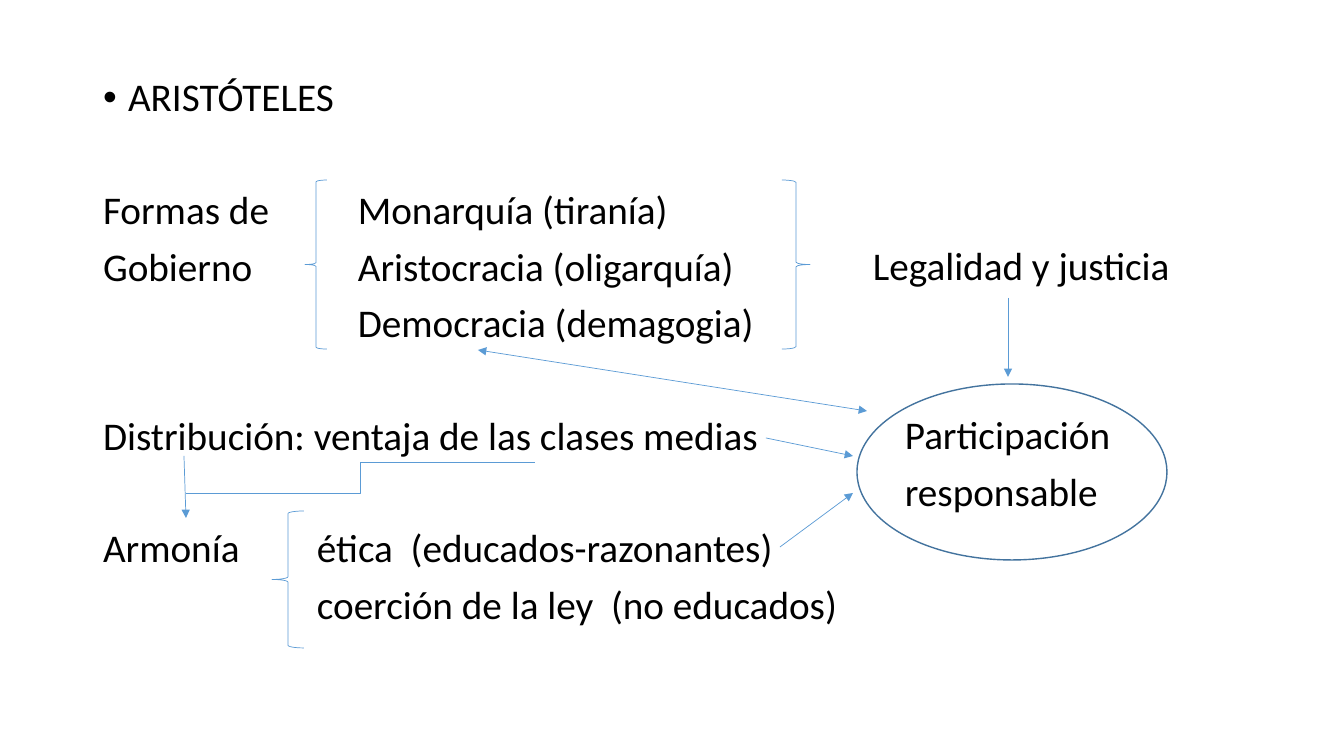
from lxml import etree
from pptx import Presentation
from pptx import util as u
from pptx.dml import color
from pptx.enum import shapes, text
from pptx.oxml import ns

SCALE = 914400 / 100.8
COLORS = {"text": "000000", "line": "5B9BD5", "ellipse": "43739E"}


def px(*lengths):
    return [u.Emu(round(length * SCALE)) for length in lengths]


def write(frame, rows, size=28, font="Calibri"):
    frame.word_wrap = True
    frame.auto_size = text.MSO_AUTO_SIZE.NONE
    frame.vertical_anchor = text.MSO_ANCHOR.TOP
    for index, (content, before, bullet) in enumerate(rows):
        paragraph = frame.add_paragraph() if index else frame.paragraphs[0]
        props = paragraph._p.get_or_add_pPr()
        indent = px(25)[0] if bullet else 0
        props.set("marL", str(indent))
        props.set("indent", str(-indent))
        if bullet:
            etree.SubElement(props, ns.qn("a:buFont"), typeface="Arial")
            etree.SubElement(props, ns.qn("a:buChar"), char=bullet)
        else:
            etree.SubElement(props, ns.qn("a:buNone"))
        paragraph.alignment = text.PP_ALIGN.LEFT
        paragraph.line_spacing = 0.9
        paragraph.space_before = u.Pt(before if index else 0)
        paragraph.space_after = u.Pt(0)
        run = paragraph.add_run()
        run.text = content
        run.font.name = font
        run.font.size = u.Pt(size)
        run.font.color.rgb = color.RGBColor.from_string(COLORS["text"])


prs = Presentation()
prs.slide_width, prs.slide_height = px(1344, 756)
slide = prs.slides.add_slide(prs.slide_layouts[1])
heading = slide.shapes.title._element
heading.getparent().remove(heading)

TOP = 73
ROW_PITCH = 56.4
ROW_GAP = 10
SKIPPED_ROW = 40.3

outline = slide.placeholders[1]
outline.left, outline.top, outline.width, outline.height = px(93, TOP, 1159, 608)
write(outline.text_frame, [
    ("ARISTÓTELES", 0, "•"),
    ("Formas de", ROW_GAP + SKIPPED_ROW, None),
    ("Gobierno", ROW_GAP, None),
    ("Distribución: ventaja de las clases medias", ROW_GAP + 2 * SKIPPED_ROW, None),
    ("Armonía", ROW_GAP + SKIPPED_ROW, None),
])

columns = [
    (348, 2, 430, ["Monarquía (tiranía)", "Aristocracia (oligarquía)", "Democracia (demagogia)"]),
    (863, 3, 340, ["Legalidad y justicia"]),
    (895, 6, 240, ["Participación", "responsable"]),
    (307, 8, 560, ["ética  (educados-razonantes)", "coerción de la ley  (no educados)"]),
]
for left, row, width, lines in columns:
    box = px(left, round(TOP + row * ROW_PITCH), width, 60 * len(lines))
    column = slide.shapes.add_textbox(*box)
    write(column.text_frame, [(line, ROW_GAP, None) for line in lines])

KIND = shapes.MSO_SHAPE
marks = [
    (KIND.LEFT_BRACE, (305, 180, 22, 169), "line", 0.5),
    (KIND.LEFT_BRACE, (272, 511, 32, 137), "line", 0.5),
    (KIND.RIGHT_BRACE, (782, 180, 28, 169), "line", 0.5),
    (KIND.OVAL, (857, 384, 310, 176), "ellipse", 1),
]
for kind, box, tone, weight in marks:
    mark = slide.shapes.add_shape(kind, *px(*box))
    mark.shadow.inherit = False
    mark.fill.background()
    mark.line.color.rgb = color.RGBColor.from_string(COLORS[tone])
    mark.line.width = u.Pt(weight)

LINK = shapes.MSO_CONNECTOR
links = [
    (LINK.ELBOW, (535, 462, 186, 493), []),
    (LINK.STRAIGHT, (184, 456, 186, 518), ["tailEnd"]),
    (LINK.STRAIGHT, (1008, 298, 1008, 377), ["tailEnd"]),
    (LINK.STRAIGHT, (766, 438, 853, 456), ["tailEnd"]),
    (LINK.STRAIGHT, (780, 547, 853, 493), ["tailEnd"]),
    (LINK.STRAIGHT, (478, 350, 867, 411), ["headEnd", "tailEnd"]),
]
for kind, ends, arrowheads in links:
    link = slide.shapes.add_connector(kind, *px(*ends))
    link.line.color.rgb = color.RGBColor.from_string(COLORS["line"])
    link.line.width = u.Pt(0.5)
    for arrowhead in arrowheads:
        etree.SubElement(link.line._get_or_add_ln(), ns.qn(f"a:{arrowhead}"), type="triangle")
    etree.SubElement(link._element.spPr, ns.qn("a:effectLst"))

prs.save("out.pptx")
